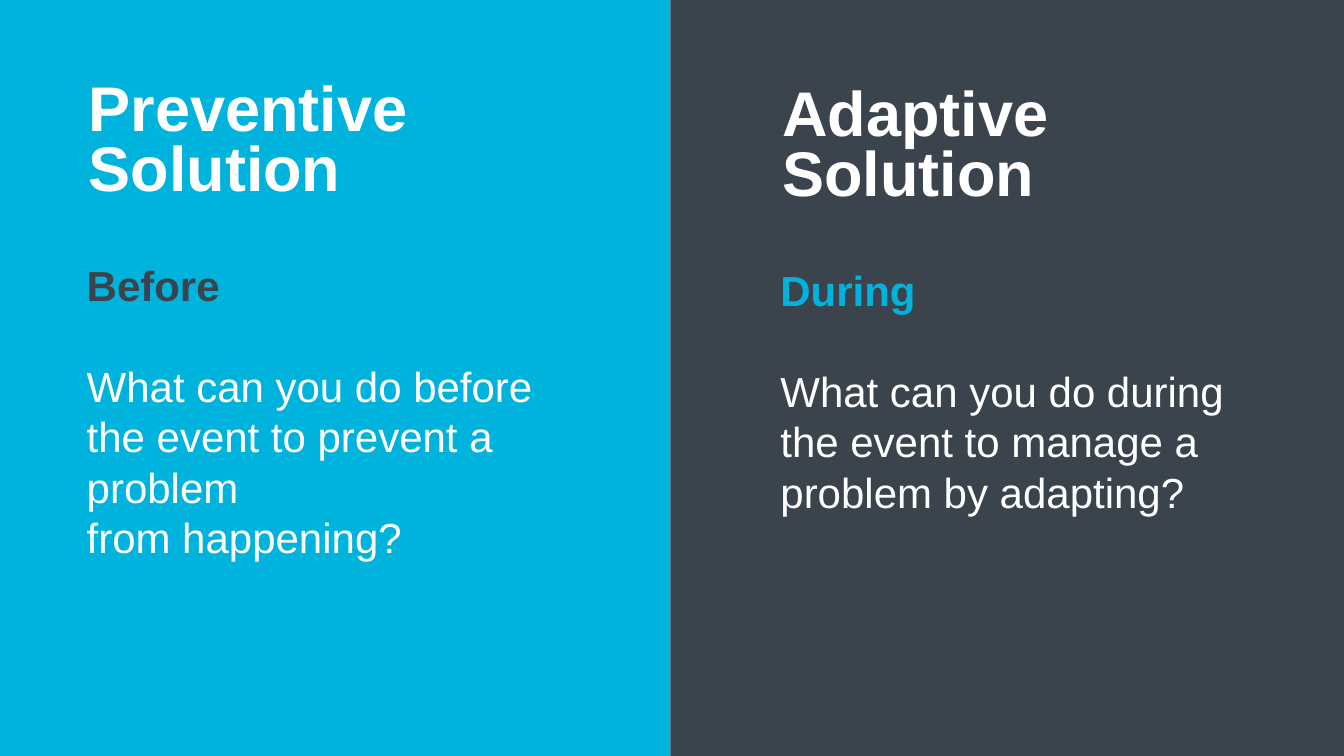
from dataclasses import dataclass

from pptx import Presentation
from pptx.dml.color import RGBColor as Rgb
from pptx.enum.shapes import MSO_SHAPE as Shape
from pptx.util import Inches, Pt


@dataclass(frozen=True)
class Theme:
    """Colours, font and type sizes of the deck."""
    blue: str = "00B3DC"
    slate: str = "3B444D"
    white: str = "FFFFFF"
    font: str = "Arial"
    title_size: int = 45
    title_pitch: int = 43
    body_size: int = 30
    body_pitch: int = 36


@dataclass(frozen=True)
class Box:
    """A rectangle in inches."""
    left: float
    top: float
    width: float
    height: float

    def inner(self, left, top, width, height):
        """Return a box placed relative to this one."""
        return Box(self.left + left, self.top + top, width, height)

    def lengths(self):
        """Return left, top, width and height as slide lengths."""
        return [Inches(side) for side in (self.left, self.top, self.width, self.height)]


THEME = Theme()
SLIDE_WIDTH, SLIDE_HEIGHT = 13.33, 7.5
SPLIT = 6.65


def add_text(slide, box, inset, lines, size, pitch):
    """Add a text box with one paragraph per (text, colour, bold, space after)."""
    frame = slide.shapes.add_textbox(*box.lengths()).text_frame
    frame.word_wrap = True
    frame.margin_left = frame.margin_right = Inches(inset)
    frame.margin_top = frame.margin_bottom = Inches(inset / 2)
    for index, (text, colour, bold, gap) in enumerate(lines):
        para = frame.add_paragraph() if index else frame.paragraphs[0]
        para.text = text
        para.line_spacing = Pt(pitch)
        para.space_after = Pt(gap)
        para.font.name = THEME.font
        para.font.size = Pt(size)
        para.font.bold = bold
        para.font.color.rgb = Rgb.from_string(colour)


def add_panel(slide, box, indent, top, fill, accent, title, heading, body):
    """Fill one half of the slide with its title, heading and question."""
    panel = slide.shapes.add_shape(Shape.RECTANGLE, *box.lengths())
    panel.shadow.inherit = False
    panel.fill.solid()
    panel.fill.fore_color.rgb = Rgb.from_string(fill)
    panel.line.fill.background()

    title_lines = [(text, THEME.white, True, 0) for text in title]
    add_text(slide, box.inner(indent, top, 3.53, 1.3), 0.07, title_lines,
             THEME.title_size, THEME.title_pitch)

    body_lines = [(heading, accent, True, THEME.body_pitch)]
    body_lines += [(text, THEME.white, False, 0) for text in body]
    body_height = 3.08 if len(body) > 1 else 2.57
    add_text(slide, box.inner(indent, top + 1.75, 4.78, body_height), 0.05, body_lines,
             THEME.body_size, THEME.body_pitch)


def main():
    """Build the two-panel comparison slide and save it."""
    deck = Presentation()
    deck.slide_width, deck.slide_height = Inches(SLIDE_WIDTH), Inches(SLIDE_HEIGHT)
    slide = deck.slides.add_slide(deck.slide_layouts[6])
    add_panel(slide, Box(0, 0, SPLIT, SLIDE_HEIGHT), 0.81, 0.8,
              THEME.blue, THEME.slate, ["Preventive Solution"], "Before",
              ["What can you do before the event to prevent a problem", "from happening?"])
    add_panel(slide, Box(SPLIT, 0, SLIDE_WIDTH - SPLIT, SLIDE_HEIGHT), 1.04, 0.85,
              THEME.slate, THEME.blue, ["Adaptive", "Solution"], "During",
              ["What can you do during the event to manage a problem by adapting?"])
    deck.save("out.pptx")


if __name__ == "__main__":
    main()
